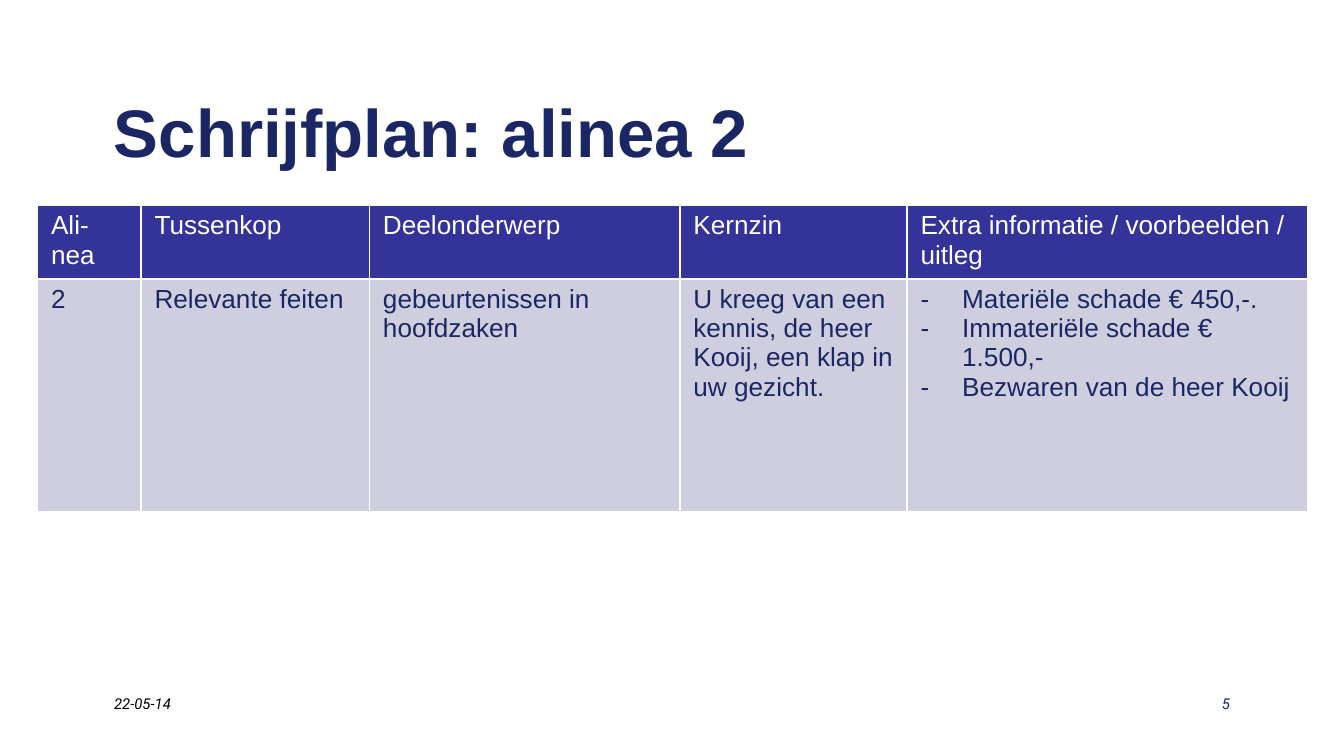
from dataclasses import dataclass

from lxml.etree import SubElement
from pptx import Presentation
from pptx.dml.color import RGBColor
from pptx.enum.text import MSO_ANCHOR, PP_ALIGN
from pptx.oxml.ns import qn
from pptx.util import Inches, Pt


@dataclass(frozen=True)
class Theme:
    """Colours, fonts and type sizes of the deck."""
    navy: str = "1B2764"
    header: str = "333399"
    body: str = "CECEDE"
    white: str = "FFFFFF"
    black: str = "000000"
    font: str = "Arial"
    footer_font: str = "Roboto"
    title_size: int = 36
    table_size: int = 14
    footer_size: int = 8


THEME = Theme()
WIDTH = 10
HEIGHT = WIDTH * 9 / 16
MARGIN = 0.75
CONTENT = WIDTH - 2 * MARGIN
COLUMNS = (0.77, 1.7, 2.31, 1.69, 2.98)
ROWS = (0.34, 1.73)
HEADINGS = ("Ali-nea", "Tussenkop", "Deelonderwerp", "Kernzin",
            "Extra informatie / voorbeelden / uitleg")
PLAN = ("2", "Relevante feiten", "gebeurtenissen in hoofdzaken",
        "U kreeg van een kennis, de heer Kooij, een klap in uw gezicht.",
        ("Materiële schade € 450,-.", "Immateriële schade € 1.500,-",
         "Bezwaren van de heer Kooij"))


def style(p, name, size, color, bold=False, italic=False):
    """Format every run of a paragraph."""
    for r in p.runs:
        r.font.name, r.font.size = name, Pt(size)
        r.font.bold, r.font.italic = bold, italic
        r.font.color.rgb = RGBColor.from_string(color)


def add_text(s, box, text, align=PP_ALIGN.LEFT, anchor=MSO_ANCHOR.TOP):
    """Add a wrapping text box and return its paragraph."""
    tf = s.shapes.add_textbox(*map(Inches, box)).text_frame
    tf.word_wrap = True
    tf.vertical_anchor = anchor
    p = tf.paragraphs[0]
    p.text = text
    p.alignment = align
    return p


def add_title(s, box, text):
    """Add the slide title."""
    p = add_text(s, box, text, anchor=MSO_ANCHOR.MIDDLE)
    style(p, THEME.font, THEME.title_size, THEME.navy, bold=True)


def add_footer(s, box, date, number):
    """Put the date at the left and the page number at the right of the box."""
    left, top, width, height = box
    part = 2.08
    for x, text, align, color in (
            (left, date, PP_ALIGN.LEFT, THEME.black),
            (left + width - part, number, PP_ALIGN.RIGHT, THEME.navy)):
        p = add_text(s, (x, top, part, height), text, align)
        style(p, THEME.footer_font, THEME.footer_size, color, italic=True)


def add_dash(p):
    """Give a paragraph a hanging dash bullet."""
    pPr = p._p.get_or_add_pPr()
    pPr.set("marL", str(Inches(0.31)))
    pPr.set("indent", str(-Inches(0.31)))
    SubElement(pPr, qn("a:buFont"), typeface=THEME.font)
    SubElement(pPr, qn("a:buChar"), char="-")


def add_borders(cell):
    """Draw thin white lines on all sides of a cell."""
    tcPr = cell._tc.get_or_add_tcPr()
    for i, side in enumerate(("lnL", "lnR", "lnT", "lnB")):
        ln = SubElement(tcPr, qn(f"a:{side}"), w=str(Pt(1)))
        fill = SubElement(ln, qn("a:solidFill"))
        SubElement(fill, qn("a:srgbClr"), val=THEME.white)
        tcPr.insert(i, ln)


def fill_cell(cell, content, fill, color):
    """Write a text, or a tuple of bulleted lines, into a cell."""
    cell.fill.solid()
    cell.fill.fore_color.rgb = RGBColor.from_string(fill)
    add_borders(cell)
    cell.margin_left = cell.margin_right = Inches(0.1)
    cell.margin_top = cell.margin_bottom = Inches(0.04)
    bulleted = isinstance(content, tuple)
    tf = cell.text_frame
    tf.text = "\n".join(content) if bulleted else content
    for p in tf.paragraphs:
        if bulleted:
            add_dash(p)
        style(p, THEME.font, THEME.table_size, color)


def add_plan(s, box):
    """Add the writing plan with a header row and a body row."""
    table = s.shapes.add_table(len(ROWS), len(COLUMNS), *map(Inches, box)).table
    for column, width in zip(table.columns, COLUMNS):
        column.width = Inches(width)
    for row, height in zip(table.rows, ROWS):
        row.height = Inches(height)
    looks = ((HEADINGS, THEME.header, THEME.white), (PLAN, THEME.body, THEME.navy))
    for row, (contents, fill, color) in zip(table.rows, looks):
        for cell, content in zip(row.cells, contents):
            fill_cell(cell, content, fill, color)


def main():
    """Build the slide and save it."""
    prs = Presentation()
    prs.slide_width, prs.slide_height = Inches(WIDTH), Inches(HEIGHT)
    s = prs.slides.add_slide(prs.slide_layouts[6])
    add_title(s, (MARGIN, 0.5, CONTENT, 0.94), "Schrijfplan: alinea 2")
    add_footer(s, (MARGIN, 5.12, CONTENT, 0.38), "22-05-14", "5")
    add_plan(s, (0.28, 1.53, sum(COLUMNS), 2.27))
    prs.save("out.pptx")


if __name__ == "__main__":
    main()
